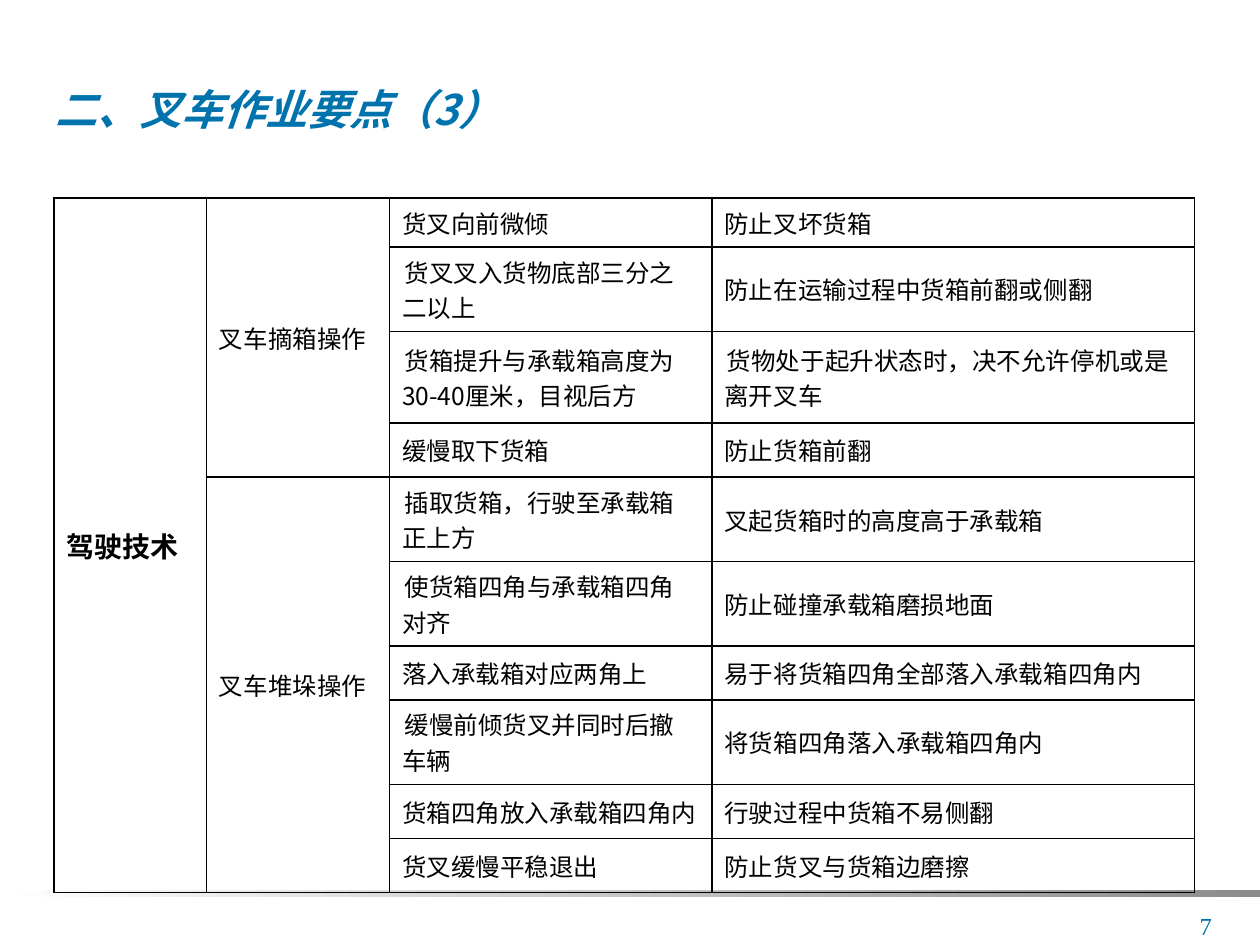
"""Build the forklift operation slide with its driving technique table."""
import dataclasses

import lxml.etree
import pptx
import pptx.dml.color
import pptx.enum.shapes
import pptx.enum.text
import pptx.oxml.ns
import pptx.util

Cm, Pt = pptx.util.Cm, pptx.util.Pt
COLORS = {"accent": "0073AD", "ink": "000000", "fade_start": "FFFFFF", "fade_end": "8B8B8B"}
CJK_FONT = "Noto Sans CJK SC"
COLUMN_WIDTHS = (3.07, 3.69, 6.5, 9.73)
FIRST_ROW_HEIGHT, ROW_HEIGHT, WRAPPED_ROW_HEIGHT, TALL_ROW_HEIGHT = 0.99, 1.09, 1.7, 1.85
TALL_ROW = 2
ACTION_CHARS, REASON_CHARS = 12, 18


@dataclasses.dataclass(frozen=True)
class Style:
    size: int
    color: str = "ink"
    font: str = CJK_FONT
    bold: bool = False
    italic: bool = False


@dataclasses.dataclass(frozen=True)
class Step:
    action: str
    reason: str


@dataclasses.dataclass(frozen=True)
class Operation:
    name: str
    steps: tuple[Step, ...]


TITLE = Style(24, "accent", bold=True, italic=True)
TOPIC = Style(16, font="Arial", bold=True)
BODY = Style(14)
PAGE_NUMBER = Style(14, "accent", "Times New Roman")

OPERATIONS = (
    Operation("叉车摘箱操作", (
        Step("货叉向前微倾", "防止叉坏货箱"),
        Step("货叉叉入货物底部三分之二以上", "防止在运输过程中货箱前翻或侧翻"),
        Step("货箱提升与承载箱高度为30-40厘米，目视后方", "货物处于起升状态时，决不允许停机或是离开叉车"),
        Step("缓慢取下货箱", "防止货箱前翻"),
    )),
    Operation("叉车堆垛操作", (
        Step("插取货箱，行驶至承载箱正上方", "叉起货箱时的高度高于承载箱"),
        Step("使货箱四角与承载箱四角对齐", "防止碰撞承载箱磨损地面"),
        Step("落入承载箱对应两角上", "易于将货箱四角全部落入承载箱四角内"),
        Step("缓慢前倾货叉并同时后撤车辆", "将货箱四角落入承载箱四角内"),
        Step("货箱四角放入承载箱四角内", "行驶过程中货箱不易侧翻"),
        Step("货叉缓慢平稳退出", "防止货叉与货箱边磨擦"),
    )),
)


def rgb(name: str) -> pptx.dml.color.RGBColor:
    """Return a named colour."""
    return pptx.dml.color.RGBColor.from_string(COLORS[name])


def add_run(paragraph, text: str, style: Style) -> None:
    """Add one styled run with matching East Asian font."""
    run = paragraph.add_run()
    run.text = text
    run.font.size = Pt(style.size)
    run.font.name = style.font
    run.font.bold = style.bold
    run.font.italic = style.italic
    run.font.color.rgb = rgb(style.color)
    lxml.etree.SubElement(run.font._element, pptx.oxml.ns.qn("a:ea"), typeface=CJK_FONT)


def add_borders(cell) -> None:
    """Draw a thin line on each side of a cell."""
    properties = cell._tc.get_or_add_tcPr()
    for side in ("lnL", "lnR", "lnT", "lnB"):
        line = lxml.etree.SubElement(properties, pptx.oxml.ns.qn(f"a:{side}"), w=str(Pt(1)))
        fill = lxml.etree.SubElement(line, pptx.oxml.ns.qn("a:solidFill"))
        lxml.etree.SubElement(fill, pptx.oxml.ns.qn("a:srgbClr"), val=COLORS["ink"])


def fill_cell(cell, text: str, style: Style = BODY, line_chars: int = ACTION_CHARS) -> None:
    """Write a cell, with a hanging indent only when the text fits one line."""
    cell.vertical_anchor = pptx.enum.text.MSO_ANCHOR.MIDDLE
    paragraph = cell.text_frame.paragraphs[0]
    margin, indent = (0, 0.05) if len(text) > line_chars else (0.97, -0.97)
    layout = paragraph._p.get_or_add_pPr()
    layout.set("marL", str(Cm(margin)))
    layout.set("indent", str(Cm(indent)))
    add_run(paragraph, text, style)


def add_footer(slide) -> None:
    """Draw the fading rule and the page number."""
    rule = slide.shapes.add_shape(
        pptx.enum.shapes.MSO_SHAPE.RECTANGLE, 0, Cm(17.95), Cm(25.4), Cm(0.13))
    rule.shadow.inherit = False
    rule.line.fill.background()
    rule.fill.gradient()
    rule.fill.gradient_angle = 0
    for stop, name in zip(rule.fill.gradient_stops, ("fade_start", "fade_end")):
        stop.color.rgb = rgb(name)
    number = slide.shapes.add_textbox(Cm(22.42), Cm(18.24), Cm(2.26), Cm(0.81))
    number.text_frame.word_wrap = True
    paragraph = number.text_frame.paragraphs[0]
    paragraph.alignment = pptx.enum.text.PP_ALIGN.RIGHT
    add_run(paragraph, "7", PAGE_NUMBER)


def add_title(slide, text: str) -> None:
    """Place and format the title."""
    title = slide.shapes.title
    title.left, title.top, title.width, title.height = Cm(0.97), Cm(1.14), Cm(24.43), Cm(2.11)
    frame = title.text_frame
    frame.auto_size = pptx.enum.text.MSO_AUTO_SIZE.NONE
    frame.word_wrap = False
    frame.vertical_anchor = pptx.enum.text.MSO_ANCHOR.MIDDLE
    frame.margin_left = frame.margin_right = Cm(0.15)
    frame.margin_top = frame.margin_bottom = Cm(0.03)
    paragraph = frame.paragraphs[0]
    paragraph.alignment = pptx.enum.text.PP_ALIGN.LEFT
    add_run(paragraph, text, TITLE)


def row_height(index: int, step: Step) -> float:
    """Return the height in centimetres that a step needs."""
    usual = WRAPPED_ROW_HEIGHT if len(step.action) > ACTION_CHARS else ROW_HEIGHT
    return {0: FIRST_ROW_HEIGHT, TALL_ROW: TALL_ROW_HEIGHT}.get(index, usual)


def add_operations_table(slide, topic: str, operations: tuple[Operation, ...]) -> None:
    """Draw the table of operations, their steps and the reasons."""
    steps = [step for operation in operations for step in operation.steps]
    heights = [row_height(index, step) for index, step in enumerate(steps)]
    table = slide.shapes.add_table(
        len(steps), len(COLUMN_WIDTHS), Cm(1.09), Cm(3.99),
        Cm(sum(COLUMN_WIDTHS)), Cm(sum(heights))).table
    table.first_row = table.horz_banding = False
    for column, width in zip(table.columns, COLUMN_WIDTHS):
        column.width = Cm(width)
    for row, height in zip(table.rows, heights):
        row.height = Cm(height)
    for cell in table.iter_cells():
        add_borders(cell)
        cell.fill.background()
    table.cell(0, 0).merge(table.cell(len(steps) - 1, 0))
    fill_cell(table.cell(0, 0), topic, TOPIC)
    first = 0
    for operation in operations:
        last = first + len(operation.steps) - 1
        table.cell(first, 1).merge(table.cell(last, 1))
        fill_cell(table.cell(first, 1), operation.name)
        for index, step in enumerate(operation.steps, first):
            fill_cell(table.cell(index, 2), step.action)
            fill_cell(table.cell(index, 3), step.reason, line_chars=REASON_CHARS)
        first = last + 1


def main() -> None:
    """Build and save the presentation."""
    presentation = pptx.Presentation()
    presentation.slide_width, presentation.slide_height = Cm(25.4), Cm(19.05)
    slide = presentation.slides.add_slide(presentation.slide_layouts.get_by_name("Title Only"))
    add_footer(slide)
    add_title(slide, "二、叉车作业要点（3）")
    add_operations_table(slide, "驾驶技术", OPERATIONS)
    presentation.save("out.pptx")


if __name__ == "__main__":
    main()
